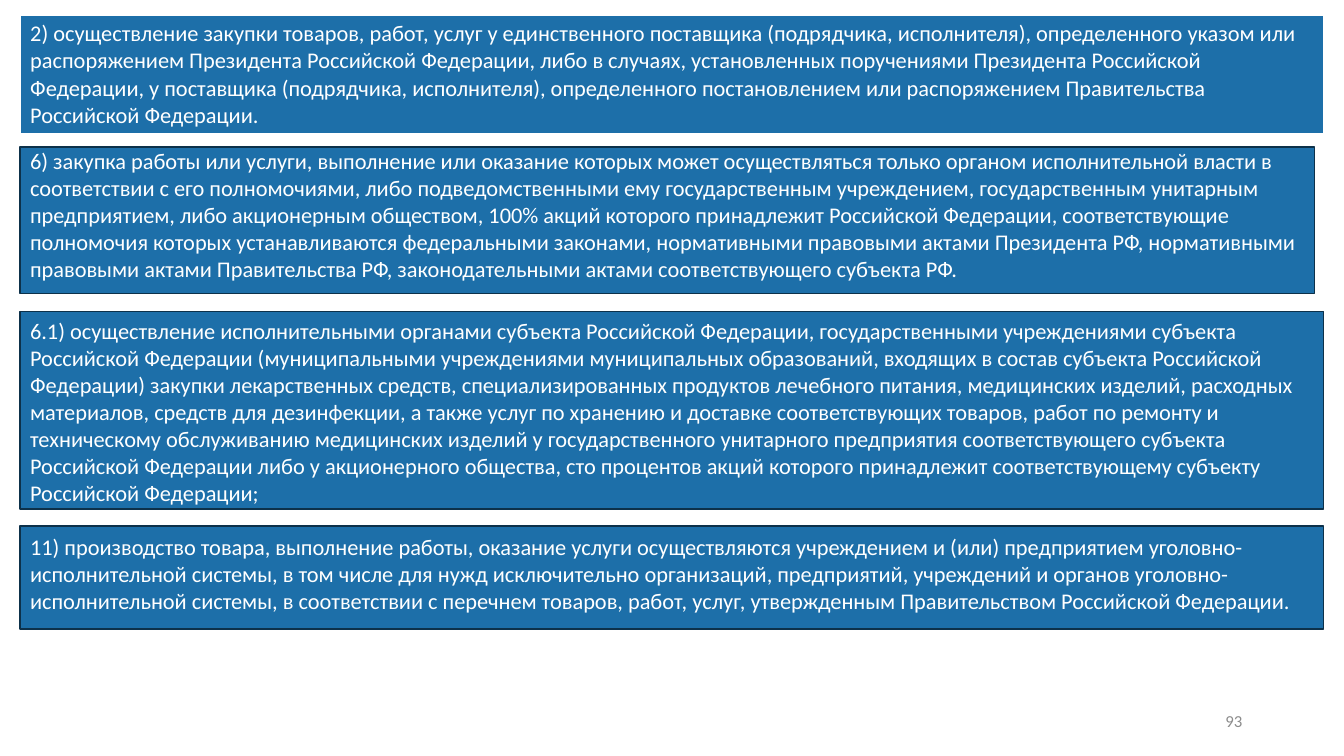
from dataclasses import dataclass

from lxml import etree
from pptx import Presentation
from pptx import util as u
from pptx.dml.color import RGBColor
from pptx.enum import shapes, text
from pptx.oxml.ns import qn


@dataclass(frozen=True)
class Theme:
    font: str = "Calibri"
    body_size: int = 16
    number_size: int = 12
    panel: str = "1D6FA9"
    outline: str = "0D314A"
    light: str = "FFFFFF"
    muted: str = "8C8C8C"


THEME = Theme()
SLIDE_W, SLIDE_H = 13.33, 7.5
LEFT, FULL_W = 0.2, 12.93
TEXT_RIGHT = LEFT + FULL_W - 0.1

CLAUSE_2 = (
    "2) осуществление закупки товаров, работ, услуг у единственного поставщика (подрядчика, "
    "исполнителя), определенного указом или распоряжением Президента Российской Федерации, либо "
    "в случаях, установленных поручениями Президента Российской Федерации, у поставщика "
    "(подрядчика, исполнителя), определенного постановлением или распоряжением Правительства "
    "Российской Федерации."
)
CLAUSE_6 = (
    "6) закупка работы или услуги, выполнение или оказание которых может осуществляться только "
    "органом исполнительной власти в соответствии с его полномочиями, либо подведомственными ему "
    "государственным учреждением, государственным унитарным предприятием, либо акционерным "
    "обществом, 100% акций которого принадлежит Российской Федерации, соответствующие полномочия "
    "которых устанавливаются федеральными законами, нормативными правовыми актами Президента РФ, "
    "нормативными правовыми актами Правительства РФ, законодательными актами соответствующего "
    "субъекта РФ."
)
CLAUSE_6_1 = (
    "6.1) осуществление исполнительными органами субъекта Российской Федерации, государственными "
    "учреждениями субъекта Российской Федерации (муниципальными учреждениями муниципальных "
    "образований, входящих в состав субъекта Российской Федерации) закупки лекарственных средств, "
    "специализированных продуктов лечебного питания, медицинских изделий, расходных материалов, "
    "средств для дезинфекции, а также услуг по хранению и доставке соответствующих товаров, работ "
    "по ремонту и техническому обслуживанию медицинских изделий у государственного унитарного "
    "предприятия соответствующего субъекта Российской Федерации либо у акционерного общества, сто "
    "процентов акций которого принадлежит соответствующему субъекту Российской Федерации;"
)
CLAUSE_11 = (
    "11) производство товара, выполнение работы, оказание услуги осуществляются учреждением и "
    "(или) предприятием уголовно-исполнительной системы, в том числе для нужд исключительно "
    "организаций, предприятий, учреждений и органов уголовно-исполнительной системы, в "
    "соответствии с перечнем товаров, работ, услуг, утвержденным Правительством Российской "
    "Федерации."
)

# Clause, box (left, top, width, height), top inset of the text
PANELS = [
    (CLAUSE_6, (LEFT, 1.46, 12.84, 1.45), 0),
    (CLAUSE_6_1, (LEFT, 3.09, FULL_W, 1.96), 0.06),
    (CLAUSE_11, (LEFT, 5.22, FULL_W, 1.02), 0.07),
]


def inches(box):
    return [u.Inches(length) for length in box]


def write(frame, wording, size, color, align=text.PP_ALIGN.LEFT):
    frame.text = wording
    frame.word_wrap = True
    line = frame.paragraphs[0]
    line.alignment = align
    font = line.runs[0].font
    font.name, font.size = THEME.font, u.Pt(size)
    font.color.rgb = RGBColor.from_string(color)


def add_border(cell, side, points):
    border = etree.SubElement(cell._tc.get_or_add_tcPr(), qn(f"a:{side}"), w=str(u.Pt(points)))
    fill = etree.SubElement(border, qn("a:solidFill"))
    etree.SubElement(fill, qn("a:srgbClr"), val=THEME.light)


def add_clause_table(slide, wording, box):
    table = slide.shapes.add_table(1, 1, *inches(box)).table
    clause = table.cell(0, 0)
    write(clause.text_frame, wording, THEME.body_size, THEME.light)
    # Borders come before the fill in the cell properties
    for side, points in (("lnL", 1), ("lnR", 1), ("lnT", 1), ("lnB", 3)):
        add_border(clause, side, points)
    clause.fill.solid()
    clause.fill.fore_color.rgb = RGBColor.from_string(THEME.panel)


def add_clause_panel(slide, wording, box, top_inset):
    panel = slide.shapes.add_shape(shapes.MSO_SHAPE.RECTANGLE, *inches(box))
    panel.shadow.inherit = False
    panel.fill.solid()
    panel.fill.fore_color.rgb = RGBColor.from_string(THEME.panel)
    panel.line.color.rgb = RGBColor.from_string(THEME.outline)
    panel.line.width = u.Pt(1)
    frame = panel.text_frame
    frame.vertical_anchor = text.MSO_ANCHOR.TOP
    frame.margin_top = u.Inches(top_inset)
    frame.margin_bottom = 0
    # Every clause wraps at the same right edge
    frame.margin_right = u.Inches(box[0] + box[2] - TEXT_RIGHT)
    write(frame, wording, THEME.body_size, THEME.light)


def add_page_number(slide, number, box):
    frame = slide.shapes.add_textbox(*inches(box)).text_frame
    frame.vertical_anchor = text.MSO_ANCHOR.MIDDLE
    write(frame, number, THEME.number_size, THEME.muted, text.PP_ALIGN.RIGHT)


def main():
    deck = Presentation()
    deck.slide_width, deck.slide_height = inches((SLIDE_W, SLIDE_H))
    slide = deck.slides.add_slide(deck.slide_layouts[6])
    add_clause_table(slide, CLAUSE_2, (LEFT, 0.15, FULL_W, 1.17))
    for wording, box, top_inset in PANELS:
        add_clause_panel(slide, wording, box, top_inset)
    add_page_number(slide, "93", (9.42, 6.95, 3, 0.4))
    deck.save("out.pptx")


if __name__ == "__main__":
    main()
